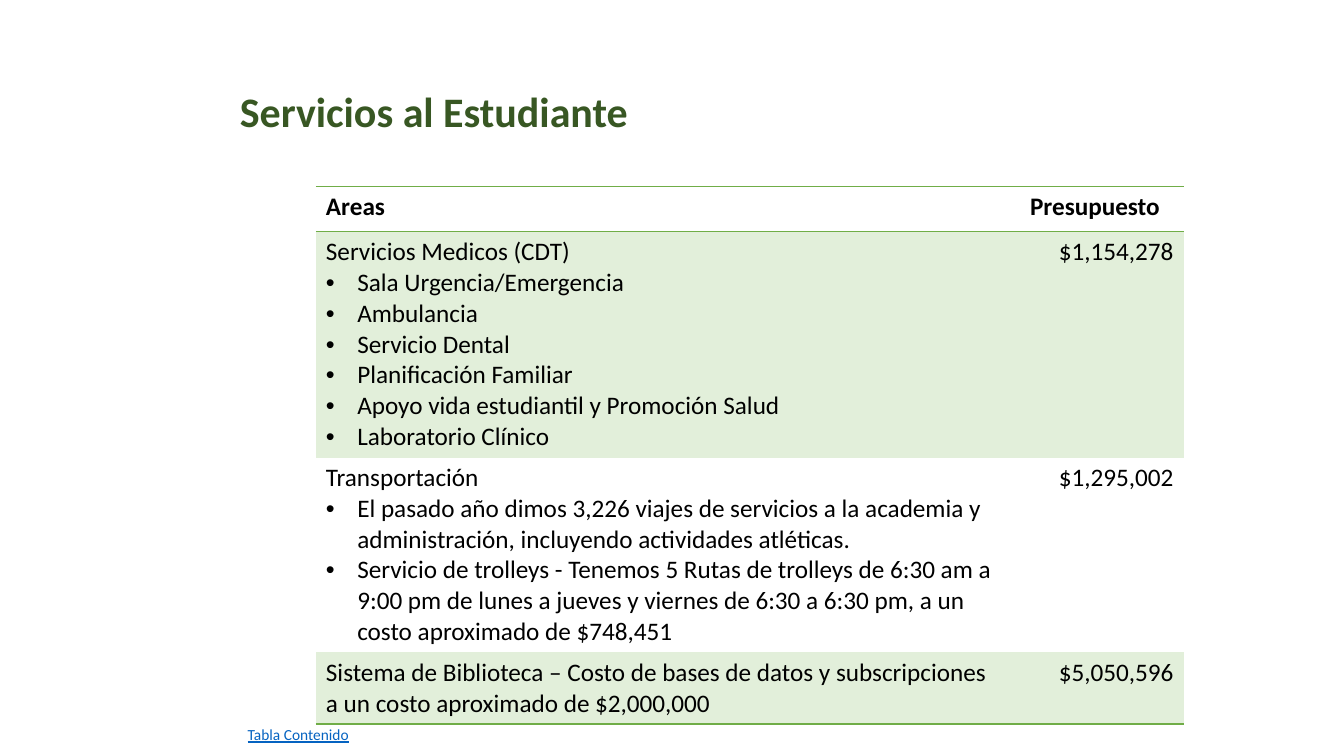
"""Build the slide on student services and their budget."""
from dataclasses import dataclass
from typing import Any

from lxml import etree
from pptx import Presentation
from pptx import util as u
from pptx.dml import color
from pptx.enum import text
from pptx.oxml import ns

HUES = {"title": "385723", "text": "000000", "rule": "70AD47",
        "band": "E2EFDA", "link": "0563C1"}
HEAD = {"size": u.Pt(30), "bold": True}
LABEL = {"size": u.Pt(18), "bold": True}
BODY = {"size": u.Pt(18), "bold": False}
LINK = {"size": u.Pt(11), "underline": True}
SIDE = text.PP_ALIGN


@dataclass
class Row:
    """A table row: area, bullet items, budget and look."""
    area: str
    items: tuple[str, ...]
    cost: str
    high: float
    side: Any = SIDE.RIGHT
    form: Any = None
    band: bool = False
    rules: tuple[str, ...] = ()


ROWS = [
    Row("Areas", (), "Presupuesto", 1.14, SIDE.CENTER, LABEL, rules=("lnT", "lnB")),
    Row("Servicios Medicos (CDT)",
        ("Sala Urgencia/Emergencia", "Ambulancia", "Servicio Dental",
         "Planificación Familiar", "Apoyo vida estudiantil y Promoción Salud",
         "Laboratorio Clínico"),
        "$1,154,278", 5.69, band=True),
    Row("Transportación",
        ("El pasado año dimos 3,226 viajes de servicios a la academia y "
         "administración, incluyendo actividades atléticas.",
         "Servicio de trolleys - Tenemos 5 Rutas de trolleys de 6:30 am a "
         "9:00 pm de lunes a jueves y viernes de 6:30 a 6:30 pm, a un costo "
         "aproximado de $748,451"),
        "$1,295,002", 4.91),
    Row("Sistema de Biblioteca – Costo de bases de datos y subscripciones "
        "a un costo aproximado de $2,000,000", (),
        "$5,050,596", 1.8, band=True, rules=("lnB",)),
]


def write(para: Any, words: str, form: dict[str, Any], hue: str = "text",
          side: Any = SIDE.LEFT) -> None:
    """Add one formatted run to a paragraph."""
    para.alignment = side
    run = para.add_run()
    run.text = words
    for name, value in {"name": "Calibri", **form}.items():
        setattr(run.font, name, value)
    run.font.color.rgb = color.RGBColor.from_string(HUES[hue])


def bullet(para: Any) -> None:
    """Give a paragraph a hanging round bullet."""
    props = para._p.get_or_add_pPr()
    dent = u.Cm(0.79)
    props.set("marL", str(dent))
    props.set("indent", str(-dent))
    etree.SubElement(props, ns.qn("a:buFont"), typeface="Arial")
    etree.SubElement(props, ns.qn("a:buChar"), char="•")


def rule(cell: Any, edge: str) -> None:
    """Draw a thin line on one edge of a cell."""
    props = cell._tc.get_or_add_tcPr()
    line = etree.SubElement(props, ns.qn(f"a:{edge}"), w=str(u.Pt(1)))
    fill = etree.SubElement(line, ns.qn("a:solidFill"))
    etree.SubElement(fill, ns.qn("a:srgbClr"), val=HUES["rule"])


def dress(cell: Any, row: Row) -> None:
    """Set the rules and fill of a cell."""
    for edge in row.rules:
        rule(cell, edge)
    if row.band:
        cell.fill.solid()
        cell.fill.fore_color.rgb = color.RGBColor.from_string(HUES["band"])
    else:
        cell.fill.background()


def draw(slide: Any) -> None:
    """Draw the budget table."""
    frame = slide.shapes.add_table(
        len(ROWS), 2, u.Cm(7.96), u.Cm(4.7), u.Cm(21.87),
        u.Cm(sum(row.high for row in ROWS)))
    table = frame.table
    table.first_row = table.horz_banding = False
    style = table._tbl.tblPr.find(ns.qn("a:tableStyleId"))
    style.text = "{2D5ABB26-0587-4C30-8999-92F81FD0307C}"
    for col, wide in zip(table.columns, (17.4, 4.47)):
        col.width = u.Cm(wide)
    for num, row in enumerate(ROWS):
        table.rows[num].height = u.Cm(row.high)
        area, cost = table.cell(num, 0), table.cell(num, 1)
        form = row.form or BODY
        write(area.text_frame.paragraphs[0], row.area, form)
        for item in row.items:
            para = area.text_frame.add_paragraph()
            bullet(para)
            write(para, item, form)
        write(cost.text_frame.paragraphs[0], row.cost, form, side=row.side)
        for cell in (area, cost):
            dress(cell, row)


def main() -> None:
    """Build and save the slide."""
    deck = Presentation()
    deck.slide_width, deck.slide_height = u.Cm(33.87), u.Cm(19.05)
    slide = deck.slides.add_slide(deck.slide_layouts[5])
    title = slide.shapes.title
    place = {"left": 5.79, "top": 1.02, "width": 25.73, "height": 3.68}
    for name, value in place.items():
        setattr(title, name, u.Cm(value))
    title.text_frame.vertical_anchor = text.MSO_ANCHOR.MIDDLE
    para = title.text_frame.paragraphs[0]
    para.line_spacing = 0.9
    write(para, "Servicios al Estudiante", HEAD, "title")
    draw(slide)
    note = slide.shapes.add_textbox(u.Cm(5.99), u.Cm(18.14), u.Cm(3.1), u.Cm(0.74))
    note.text_frame.word_wrap = False
    note.text_frame.auto_size = text.MSO_AUTO_SIZE.SHAPE_TO_FIT_TEXT
    write(note.text_frame.paragraphs[0], "Tabla Contenido", LINK, "link")
    deck.save("out.pptx")


if __name__ == "__main__":
    main()
